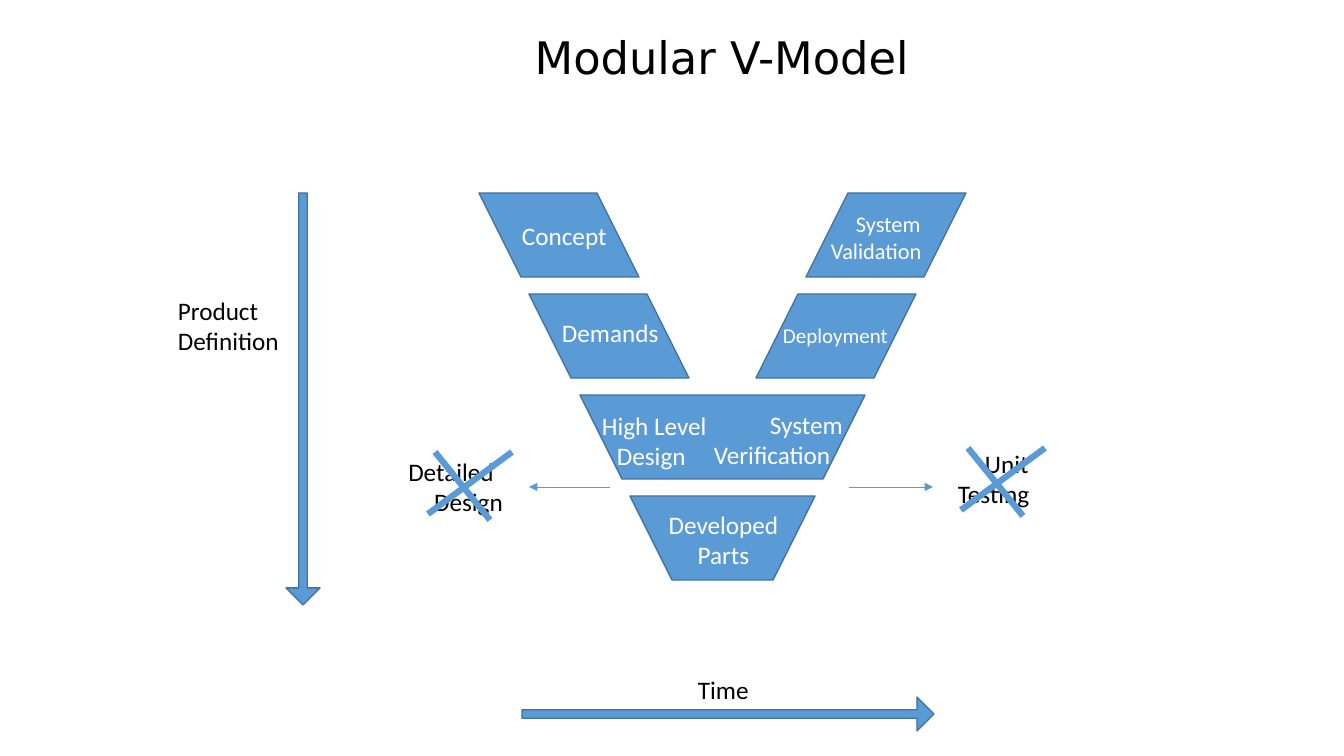
"""Builds the Modular V-Model slide."""
from lxml import etree
from pptx import Presentation, util as u
from pptx.dml.color import RGBColor
from pptx.enum import shapes, text
from pptx.oxml.ns import qn

PX = 914400 / 100.8
THEME = {
    "body": "Calibri", "heading": "DejaVu Sans",
    "block": RGBColor(0x5B, 0x9B, 0xD5), "edge": RGBColor(0x43, 0x73, 0x9E),
    "dark": RGBColor(0, 0, 0), "light": RGBColor(255, 255, 255),
    "title": 32, "label": 18, "validation": 16, "deployment": 15,
}

deck = Presentation()
deck.slide_width, deck.slide_height = u.Emu(round(1344 * PX)), u.Emu(round(756 * PX))
slide = deck.slides.add_slide(deck.slide_layouts[6])


def emu(*lengths):
    return [u.Emu(round(length * PX)) for length in lengths]


def write(lines, box, size="label", color="light", font="body", indents=(0, 0), centered=False):
    label = slide.shapes.add_textbox(*emu(*box))
    frame = label.text_frame
    frame.word_wrap = True
    frame.auto_size = text.MSO_AUTO_SIZE.SHAPE_TO_FIT_TEXT
    frame.text = lines
    for line, indent in zip(frame.paragraphs, indents):
        line.alignment = text.PP_ALIGN.CENTER if centered else text.PP_ALIGN.LEFT
        line._p.get_or_add_pPr().set("marL", str(emu(indent)[0]))
        line.font.name = THEME[font]
        line.font.size = u.Pt(THEME[size])
        line.font.color.rgb = THEME[color]


down, slanted, funnel = (shapes.MSO_SHAPE.DOWN_ARROW, shapes.MSO_SHAPE.PARALLELOGRAM,
                         shapes.MSO_SHAPE.TRAPEZOID)
blocks = [(down, (286, 193, 34, 412), 0.25, 0, False),
          (down, (711, 508, 34, 412), 0.25, 270, False)]
for row in range(4):
    top, left = 193 + 101 * row, 479 + 101 * row // 2
    right = 1445 - left
    if row < 2:
        blocks.append((slanted, (left, top, 160, 84), 0.5, 0, True))
        blocks.append((slanted, (right - 160, top, 160, 84), 0.5, 0, False))
    else:
        blocks.append((funnel, (left, top, right - left, 84), 0.5, 180, False))

for preset, box, adjustment, turn, mirrored in blocks:
    block = slide.shapes.add_shape(preset, *emu(*box))
    block.adjustments[0] = adjustment
    block.rotation = turn
    block.shadow.inherit = False
    block.fill.solid()
    block.fill.fore_color.rgb = THEME["block"]
    block.line.color.rgb = THEME["edge"]
    block.line.width = u.Pt(1)
    if mirrored:
        block._element.spPr.find(qn("a:xfrm")).set("flipH", "1")

write("Modular V-Model", (168, 25, 1008, 64), "title", "dark", "heading", (100,), True)
write("Product Definition", (168, 290, 151, 72), color="dark")
write("Time", (688, 669, 151, 40), color="dark")
write("Concept", (512, 215, 128, 40))
write("Demands", (552, 312, 128, 40))
write("Deployment", (749, 318, 161, 35), "deployment", indents=(24,))
write("System\nValidation", (816, 205, 137, 64), "validation", indents=(30, 5))
write("High Level\nDesign", (592, 405, 131, 72), indents=(0, 15))
write("System\nVerification", (704, 404, 178, 72), indents=(56, 0))
write("Developed\nParts", (641, 504, 165, 72), centered=True)
write("Detailed\nDesign", (383, 451, 131, 72), color="dark", indents=(5, 40), centered=True)
write("Unit\nTesting", (948, 443, 131, 72), color="dark", indents=(27, 0))

strokes = [((610, 487, 529, 487), 0.5, True), ((849, 487, 933, 487), 0.5, True)]
for dx, dy in ((0, 0), (533, -4)):
    for x1, y1, x2, y2 in ((512, 452, 428, 514), (435, 452, 490, 520)):
        strokes.append(((x1 + dx, y1 + dy, x2 + dx, y2 + dy), 4.5, False))

for ends, width, arrow in strokes:
    stroke = slide.shapes.add_connector(shapes.MSO_CONNECTOR.STRAIGHT, *emu(*ends))
    stroke.line.color.rgb = THEME["block"]
    stroke.line.width = u.Pt(width)
    if arrow:
        etree.SubElement(stroke.line._get_or_add_ln(), qn("a:tailEnd"), type="triangle")
    etree.SubElement(stroke._element.spPr, qn("a:effectLst"))

deck.save("out.pptx")
